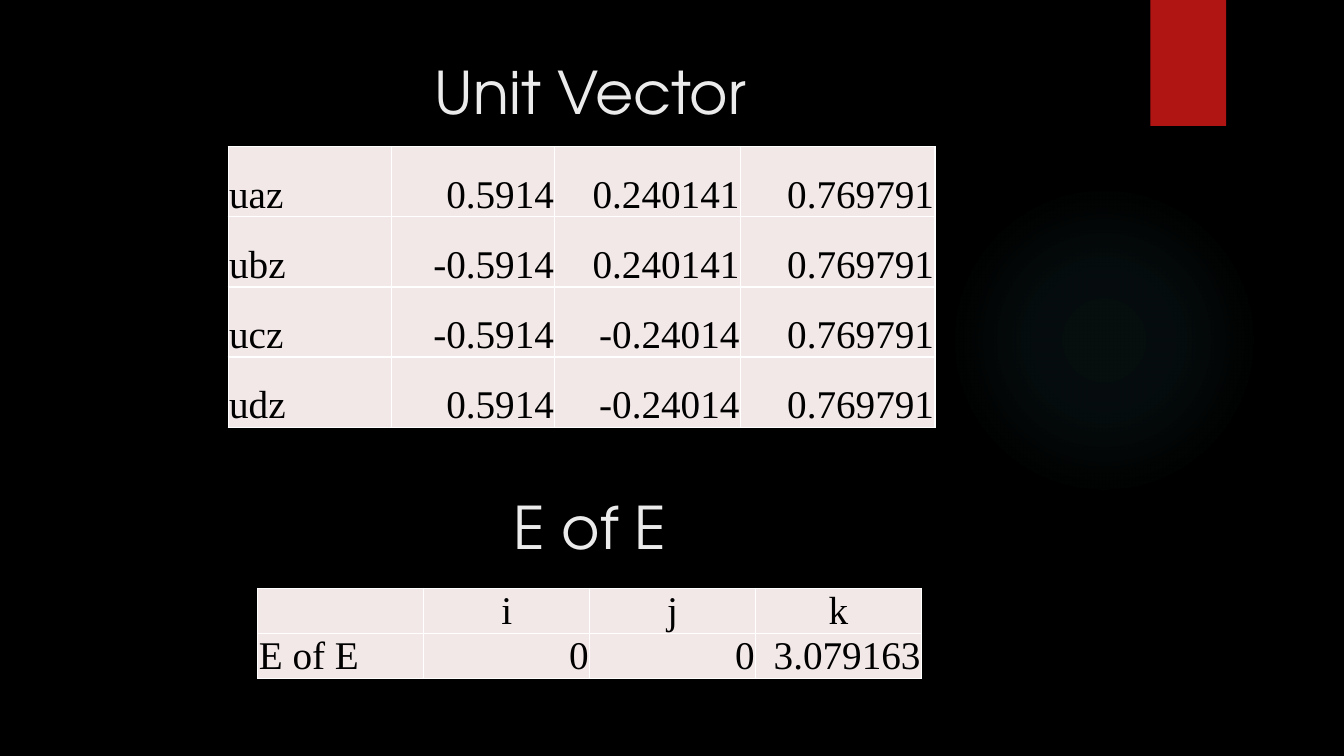
from lxml import etree
from pptx import Presentation
from pptx.dml.color import RGBColor
from pptx.enum import shapes, text
from pptx.oxml.ns import nsdecls, qn
from pptx.util import Pt

COLORS = {
    "background": "000000", "accent": "B01513", "glow": "50B9C1",
    "heading": "EBEBEB", "cell": "F2E8E7", "border": "FFFFFF", "ink": "000000",
}
HEADING_FONT, TABLE_FONT = "TeX Gyre Adventor", "Times New Roman"
HEADING_SIZE, TABLE_SIZE = 42, 28
HEADING_LEFT, HEADING_WIDTH = 51, 741
GLOW_STOPS = [(0, 7), (36, 6), (69, 0), (100, 0)]  # position %, opacity %

TITLE = {"text": "Unit Vector", "top": 36, "height": 110}
SUBTITLE = {"text": "E of E", "top": 347, "height": 68.5}

LEFT, CENTER, RIGHT = text.PP_ALIGN.LEFT, text.PP_ALIGN.CENTER, text.PP_ALIGN.RIGHT
UNIT_VECTORS = {
    "left": 163, "top": 104.8, "columns": [116.7, 116.7, 132.5, 139], "row": 50.1,
    "rows": [
        ("uaz", "0.5914", "0.240141", "0.769791"),
        ("ubz", "-0.5914", "0.240141", "0.769791"),
        ("ucz", "-0.5914", "-0.24014", "0.769791"),
        ("udz", "0.5914", "-0.24014", "0.769791"),
    ],
    "aligns": [[LEFT, RIGHT, RIGHT, RIGHT]] * 4,
}
E_OF_E = {
    "left": 184.2, "top": 420.4, "columns": [118.5] * 4, "row": 32,
    "rows": [("", "i", "j", "k"), ("E of E", "0", "0", "3.079163")],
    "aligns": [[CENTER] * 4, [LEFT, RIGHT, RIGHT, RIGHT]],
}


def rgb(name):
    return RGBColor.from_string(COLORS[name])


def add_span(para, words, font, size, color):
    span = para.add_run()
    span.text = words
    span.font.name = font
    span.font.size = Pt(size)
    span.font.color.rgb = rgb(color)


def write_heading(box, heading):
    box.left, box.top = Pt(HEADING_LEFT), Pt(heading["top"])
    box.width, box.height = Pt(HEADING_WIDTH), Pt(heading["height"])
    frame = box.text_frame
    frame.word_wrap = True
    frame.auto_size = text.MSO_AUTO_SIZE.NONE
    frame.vertical_anchor = text.MSO_ANCHOR.TOP
    para = frame.paragraphs[0]
    para.alignment = CENTER
    add_span(para, heading["text"], HEADING_FONT, HEADING_SIZE, "heading")


def add_decoration(page, kind, left, top, width, height):
    shape = page.shapes.add_shape(kind, Pt(left), Pt(top), Pt(width), Pt(height))
    shape.shadow.inherit = False
    shape.line.fill.background()
    shape.fill.solid()
    shape.fill.fore_color.rgb = rgb("accent")
    return shape


def fade_from_center(shape):
    stops = "".join(
        f'<a:gs pos="{position * 1000}"><a:srgbClr val="{COLORS["glow"]}">'
        f'<a:alpha val="{opacity * 1000}"/></a:srgbClr></a:gs>'
        for position, opacity in GLOW_STOPS)
    gradient = etree.fromstring(
        f'<a:gradFill {nsdecls("a")}><a:gsLst>{stops}</a:gsLst><a:path path="circle">'
        '<a:fillToRect l="50000" t="50000" r="50000" b="50000"/></a:path></a:gradFill>')
    solid = shape.element.spPr.find(qn("a:solidFill"))
    solid.getparent().replace(solid, gradient)


def add_borders(cell):
    properties = cell._tc.get_or_add_tcPr()
    for index, side in enumerate(("lnL", "lnR", "lnT", "lnB")):
        properties.insert(index, etree.fromstring(
            f'<a:{side} {nsdecls("a")} w="{Pt(1)}"><a:solidFill>'
            f'<a:srgbClr val="{COLORS["border"]}"/></a:solidFill></a:{side}>'))


def add_grid(page, data):
    rows, widths = data["rows"], data["columns"]
    table = page.shapes.add_table(
        len(rows), len(widths), Pt(data["left"]), Pt(data["top"]),
        Pt(sum(widths)), Pt(data["row"] * len(rows))).table
    for column, width in zip(table.columns, widths):
        column.width = Pt(width)
    for row, values, aligns in zip(table.rows, rows, data["aligns"]):
        row.height = Pt(data["row"])
        for cell, value, align in zip(row.cells, values, aligns):
            cell.fill.solid()
            cell.fill.fore_color.rgb = rgb("cell")
            add_borders(cell)
            cell.margin_left = cell.margin_right = cell.margin_top = Pt(0.7)
            cell.margin_bottom = Pt(0)
            cell.vertical_anchor = text.MSO_ANCHOR.BOTTOM
            if value:
                para = cell.text_frame.paragraphs[0]
                para.alignment = align
                add_span(para, value, TABLE_FONT, TABLE_SIZE, "ink")


def main():
    deck = Presentation()
    deck.slide_width, deck.slide_height = Pt(960), Pt(540)
    page = deck.slides.add_slide(deck.slide_layouts.get_by_name("Title Only"))
    page.background.fill.solid()
    page.background.fill.fore_color.rgb = rgb("background")

    glow = add_decoration(page, shapes.MSO_SHAPE.OVAL, 677.5, 131.8, 221.8, 221.8)
    fade_from_center(glow)
    add_decoration(page, shapes.MSO_SHAPE.RECTANGLE, 821.8, 0, 54, 90)

    write_heading(page.shapes.title, TITLE)
    add_grid(page, UNIT_VECTORS)
    write_heading(page.shapes.add_textbox(0, 0, 0, 0), SUBTITLE)
    add_grid(page, E_OF_E)
    deck.save("out.pptx")


if __name__ == "__main__":
    main()
